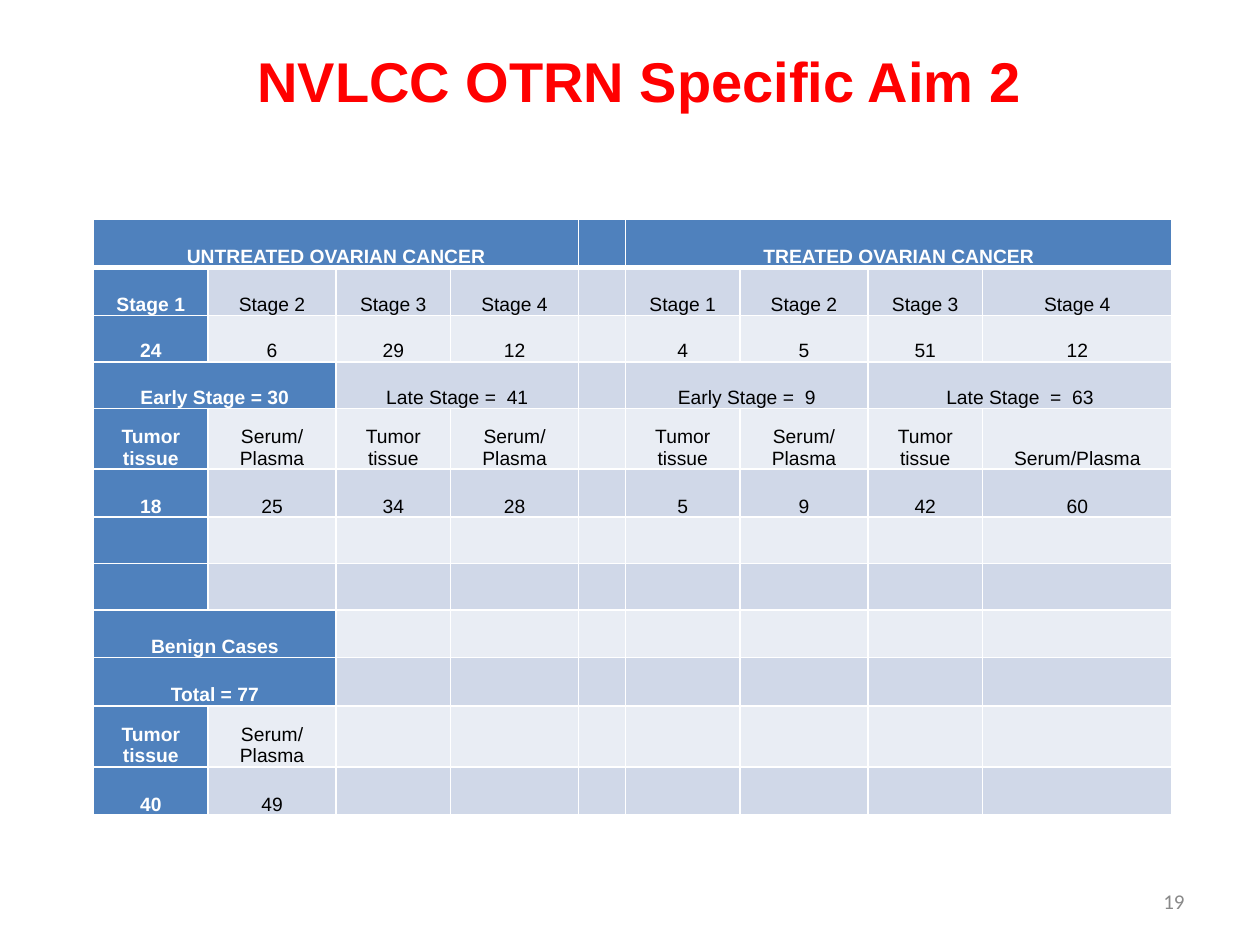
"""Build a slide tabulating ovarian cancer cases by treatment and stage."""
from dataclasses import dataclass

from lxml.etree import SubElement
from pptx import Presentation
from pptx.dml.color import RGBColor as RGB
from pptx.enum.text import MSO_ANCHOR as Anchor, PP_ALIGN as Align
from pptx.oxml.ns import qn
from pptx.util import Pt


@dataclass(frozen=True)
class Theme:
    """Colours, fonts and type sizes."""
    title: str = "FF0000"
    header: str = "4F81BD"
    bands: tuple[str, str] = ("E9EDF4", "D0D8E8")
    white: str = "FFFFFF"
    black: str = "000000"
    grey: str = "898989"
    font: str = "Arial"
    number_font: str = "Calibri"
    title_size: float = 32
    cell_size: float = 11
    number_size: float = 12
    rule: float = 1
    header_rule: float = 3


@dataclass(frozen=True)
class Box:
    """Position and size in points."""
    left: float
    top: float
    width: float
    height: float

    def lengths(self) -> tuple:
        """Return the four values as lengths."""
        return Pt(self.left), Pt(self.top), Pt(self.width), Pt(self.height)


THEME = Theme()
TITLE_BOX = Box(10.8, 23.8, 709.2, 81.4)
NUMBER_BOX = Box(516.2, 500.4, 167.8, 28.8)
STAGE_COLS = [65.4, 73.2, 65.4]
COLS = STAGE_COLS + [73.2, 26.8] + STAGE_COLS + [108.4]
ROWS = [27.6, 27.4, 26.5, 26.5, 34.8, 27.4, 26.5, 26.5, 27.4, 27.6, 34.8, 27.6]
TABLE_BOX = Box(53.5, 125.4, sum(COLS), sum(ROWS))
MERGED = "<"
STAGES = ["Stage 1", "Stage 2", "Stage 3", "Stage 4"]
SAMPLES = ["Tumor tissue", "Serum/Plasma"]
GRID = [
    ["UNTREATED OVARIAN CANCER", *MERGED * 3, "", "TREATED OVARIAN CANCER", *MERGED * 3],
    [*STAGES, "", *STAGES],
    ["24", "6", "29", "12", "", "4", "5", "51", "12"],
    ["Early Stage = 30", MERGED, "Late Stage =  41", MERGED, "",
     "Early Stage =  9", MERGED, "Late Stage  =  63", MERGED],
    [*SAMPLES * 2, "", *SAMPLES * 2],
    ["18", "25", "34", "28", "", "5", "9", "42", "60"],
    [],
    [],
    ["Benign Cases", MERGED],
    ["Total = 77", MERGED],
    SAMPLES,
    ["40", "49"],
]


def add_run(p, text: str, font: str, size: float, color: str, bold: bool = False) -> None:
    """Add one formatted run to a paragraph."""
    r = p.add_run()
    r.text = text
    r.font.name, r.font.size, r.font.bold = font, Pt(size), bold
    r.font.color.rgb = RGB.from_string(color)


def add_title(s, text: str) -> None:
    """Place and format the title placeholder."""
    sp = s.shapes.title
    sp.left, sp.top, sp.width, sp.height = TITLE_BOX.lengths()
    tf = sp.text_frame
    tf.vertical_anchor, tf.margin_top = Anchor.TOP, Pt(3)
    p = tf.paragraphs[0]
    p.alignment = Align.CENTER
    add_run(p, text, THEME.font, THEME.title_size, THEME.title, True)


def add_number(s, text: str) -> None:
    """Add the slide number."""
    tf = s.shapes.add_textbox(*NUMBER_BOX.lengths()).text_frame
    tf.word_wrap, tf.vertical_anchor = True, Anchor.MIDDLE
    p = tf.paragraphs[0]
    p.alignment = Align.RIGHT
    add_run(p, text, THEME.number_font, THEME.number_size, THEME.grey)


def add_borders(cell, row: int) -> None:
    """Draw white rules round a cell, thicker below the header row."""
    props = cell._tc.get_or_add_tcPr()
    thick = {0: "lnB", 1: "lnT"}.get(row)
    for side in ("lnL", "lnR", "lnT", "lnB"):
        width = THEME.header_rule if side == thick else THEME.rule
        line = SubElement(props, qn(f"a:{side}"), w=str(Pt(width)))
        fill = SubElement(line, qn("a:solidFill"))
        SubElement(fill, qn("a:srgbClr"), val=THEME.white)


def format_cell(cell, row: int, col: int, text: str) -> None:
    """Set the rules, fill and text of a cell."""
    head = row == 0 or col == 0
    add_borders(cell, row)
    cell.fill.solid()
    cell.fill.fore_color.rgb = RGB.from_string(THEME.header if head else THEME.bands[row % 2])
    cell.vertical_anchor = Anchor.BOTTOM
    cell.margin_left = cell.margin_right = Pt(5)
    cell.margin_top = cell.margin_bottom = Pt(0)
    p = cell.text_frame.paragraphs[0]
    p.alignment = Align.CENTER
    if text and text != MERGED:
        color = THEME.white if head else THEME.black
        add_run(p, text, THEME.font, THEME.cell_size, color, head)


def add_cases_table(s) -> None:
    """Add the table and merge the cells that share a label."""
    table = s.shapes.add_table(len(ROWS), len(COLS), *TABLE_BOX.lengths()).table
    table.first_col, table.horz_banding = True, False
    for column, width in zip(table.columns, COLS):
        column.width = Pt(width)
    for line, height in zip(table.rows, ROWS):
        line.height = Pt(height)
    for row, labels in enumerate(GRID):
        texts = labels + [""] * (len(COLS) - len(labels))
        for col, text in enumerate(texts):
            format_cell(table.cell(row, col), row, col, text)
        for col, text in enumerate(texts):
            end = col
            while text != MERGED and end + 1 < len(COLS) and texts[end + 1] == MERGED:
                end += 1
            if end > col:
                table.cell(row, col).merge(table.cell(row, end))


def main() -> None:
    """Build and save the slide."""
    prs = Presentation()
    prs.slide_width, prs.slide_height = Pt(720), Pt(540)
    s = prs.slides.add_slide(prs.slide_layouts.get_by_name("Title Only"))
    add_number(s, "19")
    add_title(s, "NVLCC OTRN Specific Aim 2")
    add_cases_table(s)
    prs.save("out.pptx")


if __name__ == "__main__":
    main()
